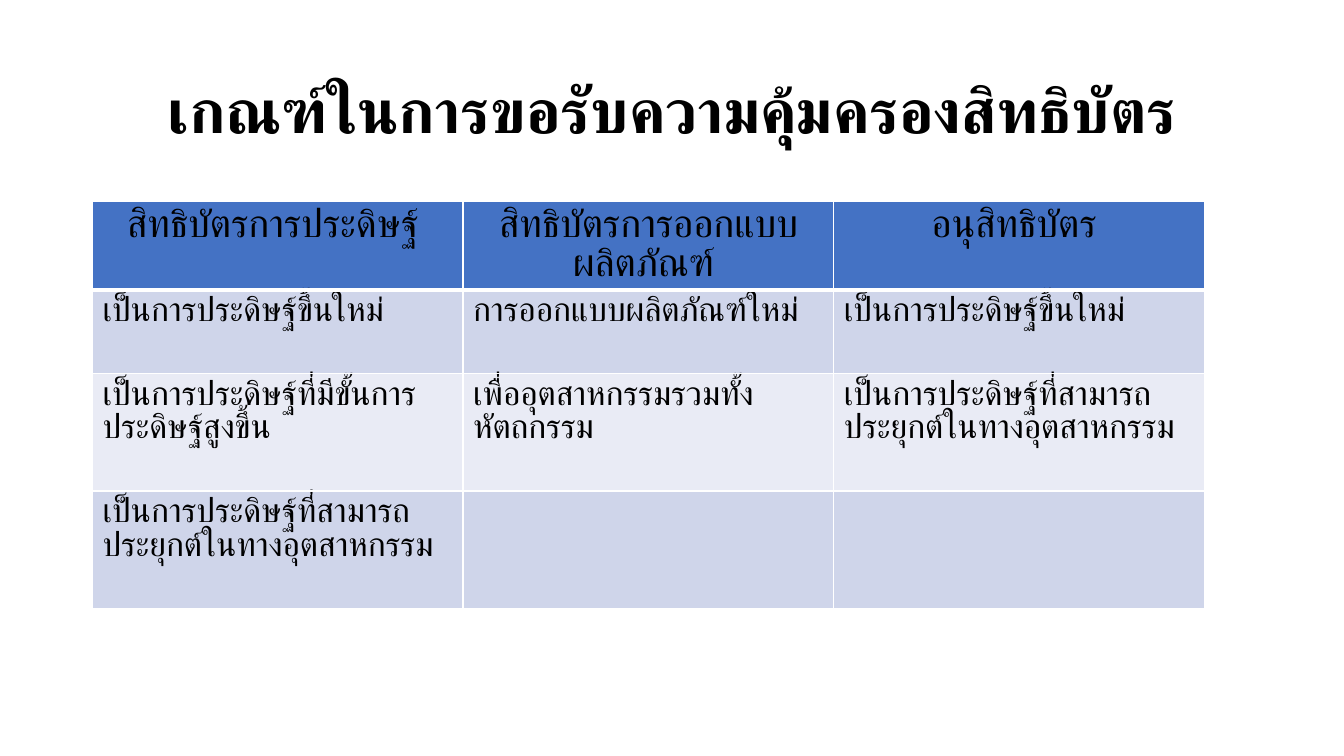
from lxml.etree import SubElement
from pptx import Presentation
from pptx.dml.color import RGBColor
from pptx.enum.text import MSO_ANCHOR, PP_ALIGN
from pptx.oxml.ns import qn
from pptx.util import Cm, Pt

TITLE = "เกณฑ์ในการขอรับความคุ้มครองสิทธิบัตร"
HEADERS = ["สิทธิบัตรการประดิษฐ์ ", "สิทธิบัตรการออกแบบผลิตภัณฑ์ ", "อนุสิทธิบัตร "]
CRITERIA = [
    ["เป็นการประดิษฐ์ขึ้นใหม่", "การออกแบบผลิตภัณฑ์ใหม่", "เป็นการประดิษฐ์ขึ้นใหม่"],
    ["เป็นการประดิษฐ์ที่มีขั้นการประดิษฐ์สูงขึ้น", "เพื่ออุตสาหกรรมรวมทั้งหัตถกรรม",
     "เป็นการประดิษฐ์ที่สามารถประยุกต์ในทางอุตสาหกรรม"],
    ["เป็นการประดิษฐ์ที่สามารถประยุกต์ในทางอุตสาหกรรม", "", ""],
]

FONT = "Lato"
BLACK = RGBColor(0x00, 0x00, 0x00)
WHITE = RGBColor(0xFF, 0xFF, 0xFF)
HEADER_BLUE = RGBColor(0x44, 0x72, 0xC4)
BANDS = [RGBColor(0xCF, 0xD5, 0xEA), RGBColor(0xE9, 0xEB, 0xF5)]

LEFT = Cm(2.33)
TABLE_TOP = Cm(5.08)
COLUMN_WIDTH = Cm(9.34)
ROW_HEIGHTS = [Cm(2.2), Cm(2.11), Cm(2.96), Cm(2.96)]
TABLE_LINE_SPACING = 0.83


def write(frame, text, size, bold=False, align=PP_ALIGN.LEFT, line_spacing=None):
    """Fill a text frame, setting the font for Latin and Thai script alike."""
    frame.word_wrap = True
    paragraph = frame.paragraphs[0]
    paragraph.alignment = align
    paragraph.line_spacing = line_spacing
    if not text:
        paragraph.font.size = Pt(size)
        return
    run = paragraph.add_run()
    run.text = text
    run.font.size = Pt(size)
    run.font.bold = bold
    run.font.name = FONT
    run.font.color.rgb = BLACK
    SubElement(run.font._element, qn("a:cs"), typeface=FONT)


def set_borders(cell, top, bottom):
    """Draw white borders; they precede the fill in the cell properties."""
    properties = cell._tc.get_or_add_tcPr()
    widths = {"a:lnL": 1, "a:lnR": 1, "a:lnT": top, "a:lnB": bottom}
    for tag, width in widths.items():
        line = SubElement(properties, qn(tag), w=str(Pt(width)))
        SubElement(SubElement(line, qn("a:solidFill")), qn("a:srgbClr"), val=str(WHITE))


def add_title(slide):
    box = slide.shapes.add_textbox(LEFT, Cm(1.01), Cm(29.21), Cm(3.68))
    box.text_frame.vertical_anchor = MSO_ANCHOR.MIDDLE
    write(box.text_frame, TITLE, 44, bold=True, align=PP_ALIGN.CENTER, line_spacing=0.9)


def add_criteria_table(slide):
    rows = [HEADERS] + CRITERIA
    table = slide.shapes.add_table(
        len(rows), len(HEADERS), LEFT, TABLE_TOP,
        COLUMN_WIDTH * len(HEADERS), sum(ROW_HEIGHTS)).table
    for column in table.columns:
        column.width = COLUMN_WIDTH
    for row_index, texts in enumerate(rows):
        table.rows[row_index].height = ROW_HEIGHTS[row_index]
        is_header = row_index == 0
        fill = HEADER_BLUE if is_header else BANDS[(row_index - 1) % 2]
        for column_index, text in enumerate(texts):
            cell = table.cell(row_index, column_index)
            set_borders(cell, top=3 if row_index == 1 else 1, bottom=3 if is_header else 1)
            cell.fill.solid()
            cell.fill.fore_color.rgb = fill
            write(cell.text_frame, text, 28 if is_header else 24,
                  align=PP_ALIGN.CENTER if is_header else PP_ALIGN.LEFT,
                  line_spacing=TABLE_LINE_SPACING)


def main():
    presentation = Presentation()
    presentation.slide_width = Cm(33.87)
    presentation.slide_height = Cm(19.05)
    slide = presentation.slides.add_slide(presentation.slide_layouts[6])
    add_title(slide)
    add_criteria_table(slide)
    presentation.save("out.pptx")


if __name__ == "__main__":
    main()
